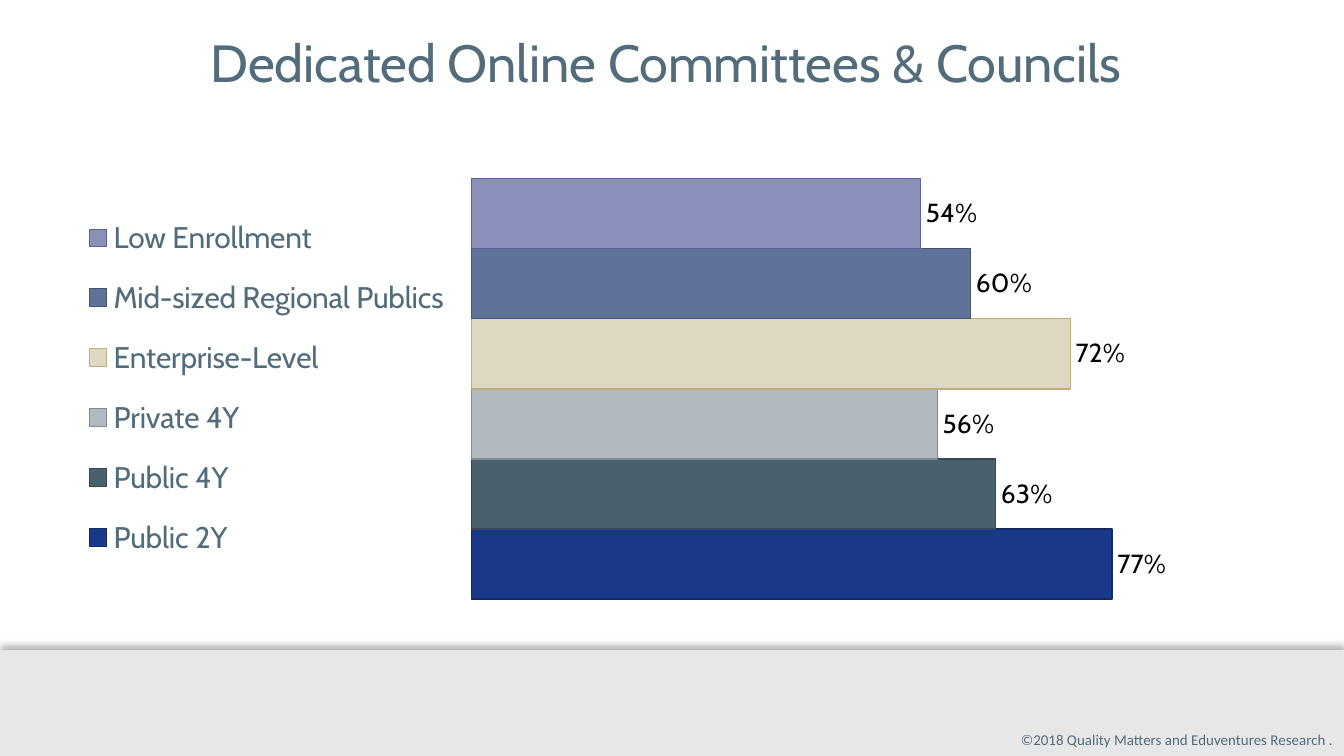
from lxml import etree
from pptx import Presentation
from pptx.chart.data import CategoryChartData
from pptx.dml.color import RGBColor
from pptx.enum.chart import XL_CHART_TYPE as ChartType, XL_LABEL_POSITION as LabelPos
from pptx.enum.chart import XL_LEGEND_POSITION as LegendPos
from pptx.enum.shapes import MSO_SHAPE as Shape
from pptx.enum.text import MSO_ANCHOR as Anchor, PP_ALIGN as Align
from pptx.oxml import parse_xml
from pptx.oxml.ns import nsdecls, qn
from pptx.util import Cm, Pt

TITLE = "Dedicated Online Committees & Councils"
COPYRIGHT = "©2018 Quality Matters and Eduventures Research ."
COLORS = {"text": "526C7C", "label": "000000", "band": "E7E7E7"}
SERIES = [  # name, share, fill; bottom bar first
    ("Public 2Y", 0.77, "1A3888"),
    ("Public 4Y", 0.63, "4A606C"),
    ("Private 4Y", 0.56, "B2B9BF"),
    ("Enterprise-Level", 0.72, "DED8C0"),
    ("Mid-sized Regional Publics", 0.60, "5F7299"),
    ("Low Enrollment", 0.54, "8A90BA"),
]
PLOT_AREA = {"x": 0.337, "y": 0.044, "w": 0.628, "h": 0.956}
LEGEND_AREA = {"x": 0.01, "y": 0.17, "w": 0.31, "h": 0.7}
SLIDE_W, SLIDE_H = Cm(25.4), Cm(14.29)
BAND_TOP = Cm(12.29)
LEFT, WIDTH = Cm(1.32), Cm(22.53)


def rgb(name):
    return RGBColor.from_string(COLORS.get(name, name))


def style(font, size, color, name="Cabin"):
    font.size, font.name = Pt(size), name
    font.bold = False
    font.color.rgb = rgb(color)


def manual_layout(area, inner=False):
    """Return a c:layout element; area holds fractions of the chart."""
    layout = parse_xml(f"<c:layout {nsdecls('c')}><c:manualLayout/></c:layout>")
    parts = [("layoutTarget", "inner")] if inner else []
    parts += [("xMode", "edge"), ("yMode", "edge")] + list(area.items())
    for tag, value in parts:
        etree.SubElement(layout[0], qn(f"c:{tag}")).set("val", str(value))
    return layout


def add_band(s):
    sp = s.shapes.add_shape(Shape.RECTANGLE, 0, BAND_TOP, SLIDE_W, SLIDE_H - BAND_TOP)
    sp.fill.solid()
    sp.fill.fore_color.rgb = rgb("band")
    sp.line.fill.background()
    sp.shadow.inherit = False
    effects = sp._element.spPr.find(qn("a:effectLst"))
    effects.append(parse_xml(
        f'<a:outerShdw {nsdecls("a")} blurRad="{Pt(4)}" dist="{Pt(3)}" dir="16200000"'
        ' rotWithShape="0"><a:srgbClr val="000000"><a:alpha val="30000"/></a:srgbClr>'
        '</a:outerShdw>'))


def add_copyright(s):
    tf = s.shapes.add_textbox(Cm(17.15), Cm(13.69), Cm(8.05), Cm(0.6)).text_frame
    tf.word_wrap = True
    tf.margin_right = 0
    p = tf.paragraphs[0]
    p.text, p.alignment = COPYRIGHT, Align.RIGHT
    style(p.runs[0].font, 8, "text", "Calibri")


def add_title(s):
    title = s.shapes.title
    title.left, title.top, title.width, title.height = LEFT, Cm(0.43), WIDTH, Cm(1.45)
    tf = title.text_frame
    tf.text, tf.vertical_anchor = TITLE, Anchor.MIDDLE
    p = tf.paragraphs[0]
    p.alignment = Align.CENTER
    style(p.runs[0].font, 28, "text")


def add_bars(s):
    data = CategoryChartData(number_format="0%")
    data.categories = ["1"]
    for name, share, _ in SERIES:
        data.add_series(name, [share])
    chart = s.shapes.add_chart(ChartType.BAR_CLUSTERED, LEFT, Cm(1.93), WIDTH,
                               Cm(10.39), data).chart
    style(chart.font, 10, "label")
    chart.has_title = False
    chart.value_axis.minimum_scale, chart.value_axis.maximum_scale = 0, 0.9
    chart.value_axis.has_major_gridlines = False
    chart.value_axis.visible = chart.category_axis.visible = False

    chart.has_legend = True
    legend = chart.legend
    legend.position, legend.include_in_layout = LegendPos.RIGHT, False
    style(legend.font, 16, "text")

    plot = chart.plots[0]
    plot.gap_width, plot.overlap, plot.vary_by_categories = 150, 0, False
    for series, (_, _, color) in zip(plot.series, SERIES):
        series.format.fill.solid()
        series.format.fill.fore_color.rgb = rgb(color)
        line = series.format.line
        line.width = Pt(0.75)
        line.color.rgb = rgb(color)
        line.color.brightness = -0.25
        labels = series.data_labels
        labels.show_value, labels.position = True, LabelPos.OUTSIDE_END
        labels.number_format, labels.number_format_is_linked = "0%", False
        style(labels.font, 14, "label")

    plot_area = chart._chartSpace.chart.plotArea
    for old in plot_area.findall(qn("c:layout")):
        plot_area.remove(old)
    plot_area.insert(0, manual_layout(PLOT_AREA, inner=True))
    box = legend._element
    for old in box.findall(qn("c:layout")):
        box.remove(old)
    box.find(qn("c:legendPos")).addnext(manual_layout(LEGEND_AREA))


def main():
    prs = Presentation()
    prs.slide_width, prs.slide_height = SLIDE_W, SLIDE_H
    s = prs.slides.add_slide(prs.slide_layouts[5])
    add_band(s)
    add_copyright(s)
    add_bars(s)
    add_title(s)
    prs.save("out.pptx")


if __name__ == "__main__":
    main()
